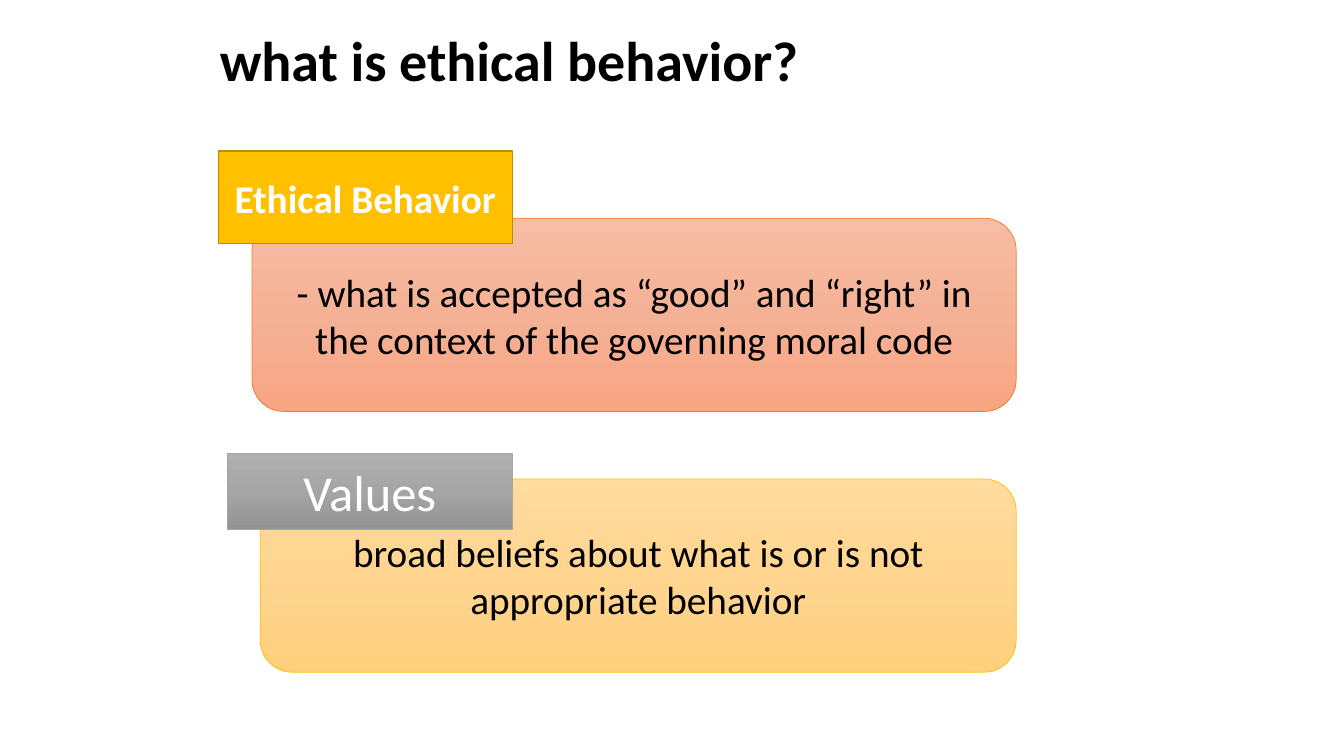
from copy import deepcopy

from pptx import Presentation
from pptx.dml.color import RGBColor
from pptx.enum.shapes import MSO_SHAPE as Shape
from pptx.enum.text import MSO_ANCHOR as Anchor, PP_ALIGN as Align
from pptx.oxml.ns import qn
from pptx.util import Cm, Pt


def color(hex_text):
    return RGBColor.from_string(hex_text)


class SlideBuilder:
    font_name = "Calibri"
    text_color = "000000"
    label_color = "FFFFFF"

    def __init__(self, slide):
        self.slide = slide

    def add_text(self, shape, text, size, text_color, bold=False, align=Align.CENTER):
        frame = shape.text_frame
        frame.word_wrap = True
        frame.vertical_anchor = Anchor.MIDDLE
        paragraph = frame.paragraphs[0]
        paragraph.alignment = align
        run = paragraph.add_run()
        run.text = text
        run.font.name = self.font_name
        run.font.size = Pt(size)
        run.font.bold = bold
        run.font.color.rgb = color(text_color)
        return paragraph

    def title(self, box, text):
        shape = self.slide.shapes.add_textbox(*map(Cm, box))
        paragraph = self.add_text(shape, text, 40, self.text_color, True, Align.LEFT)
        paragraph.line_spacing = 0.9

    def fill(self, shape, colors):
        """Fill with one color, or with evenly spaced colors from top to bottom."""
        if len(colors) == 1:
            shape.fill.solid()
            shape.fill.fore_color.rgb = color(colors[0])
            return
        shape.fill.gradient()
        shape.fill.gradient_angle = 270
        stop_list = shape.element.spPr.find(qn("a:gradFill")).find(qn("a:gsLst"))
        while len(stop_list) < len(colors):
            stop_list.append(deepcopy(stop_list[-1]))
        for index, stop in enumerate(shape.fill.gradient_stops):
            stop.position = index / (len(colors) - 1)
            stop.color.rgb = color(colors[index])

    def block(self, kind, box, colors, line_color, line_width):
        shape = self.slide.shapes.add_shape(kind, *map(Cm, box))
        shape.shadow.inherit = False
        self.fill(shape, colors)
        shape.line.color.rgb = color(line_color)
        shape.line.width = Pt(line_width)
        return shape

    def definition(self, box, colors, line_color, text):
        shape = self.block(Shape.ROUNDED_RECTANGLE, box, colors, line_color, 0.5)
        self.add_text(shape, text, 28, self.text_color)

    def label(self, box, colors, line_color, line_width, text, size, bold=False):
        shape = self.block(Shape.RECTANGLE, box, colors, line_color, line_width)
        self.add_text(shape, text, size, self.label_color, bold)


def main():
    presentation = Presentation()
    presentation.slide_width = Cm(33.87)
    presentation.slide_height = Cm(19.05)
    builder = SlideBuilder(presentation.slides.add_slide(presentation.slide_layouts[6]))

    builder.title((5.29, 0, 20.75, 3.18), "what is ethical behavior?")
    builder.definition(
        (6.35, 5.5, 19.26, 4.87), ["F7BDA5", "F5B196", "F8A582"], "ED7D31",
        "- what is accepted as “good” and “right” in the context of the governing moral code")
    builder.definition(
        (6.56, 12.07, 19.05, 4.87), ["FFDB9E", "FFD590", "FFD07C"], "FFC000",
        "broad beliefs about what is or is not appropriate behavior")
    builder.label((5.5, 3.81, 7.41, 2.33), ["FFC000"], "BD8E00", 1,
                  "Ethical Behavior", 28, True)
    builder.label((5.72, 11.43, 7.2, 1.91), ["AFAFAF", "A5A5A5", "939393"], "A5A5A5", 0.5,
                  "Values", 36)

    presentation.save("out.pptx")


if __name__ == "__main__":
    main()
